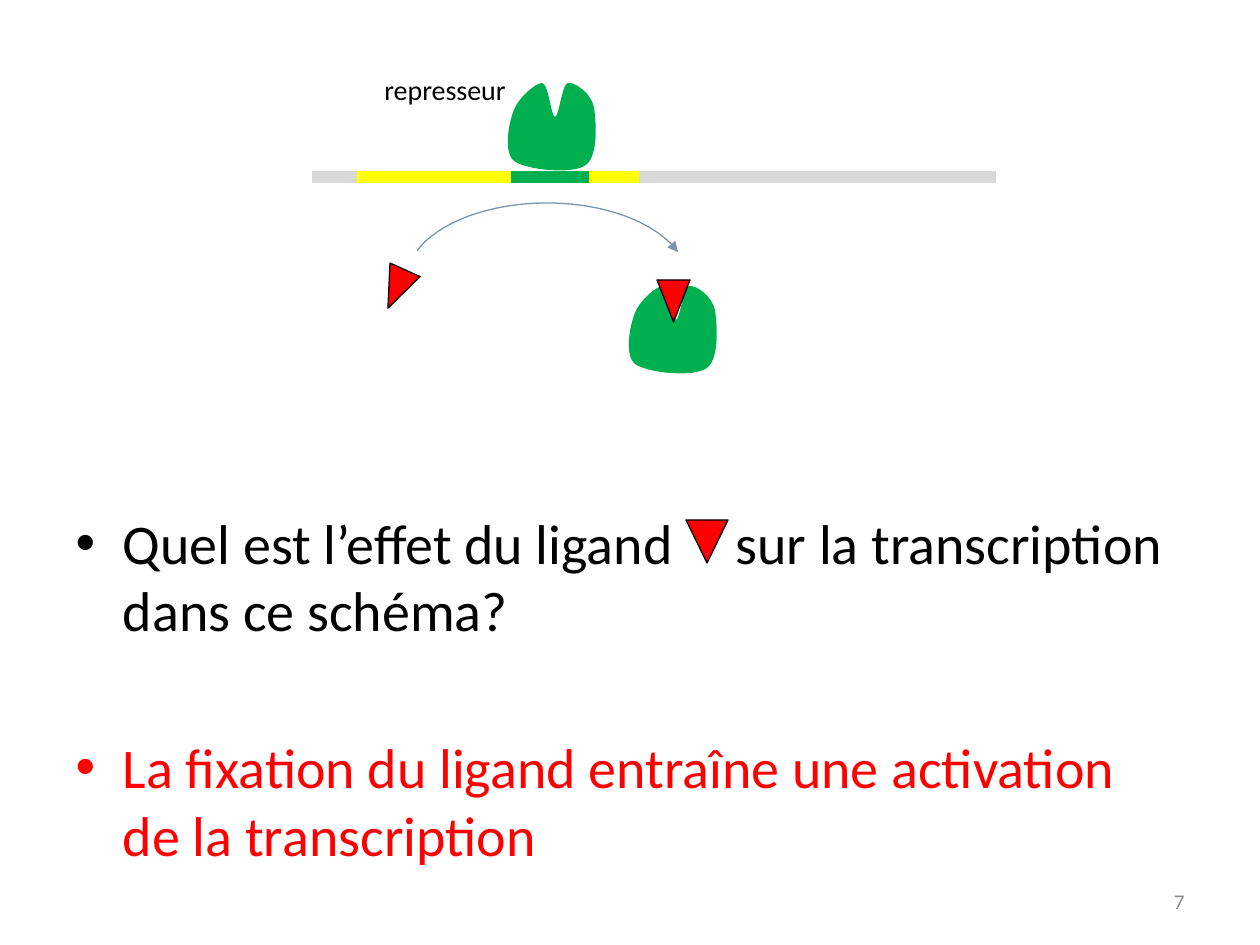
from lxml import etree
from pptx import Presentation
from pptx import util as u
from pptx.dml.color import RGBColor
from pptx.enum import shapes, text
from pptx.oxml.ns import qn

PX = 914400 / 126
FONT = "Calibri"
COLOURS = {
    "black": "000000",
    "dna": "D9D9D9",
    "gene": "FFFF00",
    "repressor": "00B050",
    "ligand": "FF0000",
    "arrow": "7A94AA",
    "number": "898989",
}
REPRESSOR_SIZE = 88
REPRESSOR_START = (6, 78)
REPRESSOR_CURVES = [
    ((-5, 69), (1, 39), (6, 27)),
    ((11, 14), (28, 0), (34, 0)),
    ((41, 1), (43, 34), (47, 34)),
    ((51, 34), (54, 1), (60, 0)),
    ((67, -1), (83, 10), (86, 24)),
    ((88, 37), (91, 72), (78, 82)),
    ((65, 92), (18, 87), (6, 78)),
]


def px(value):
    """Turn pixels into EMU."""
    return u.Emu(round(value * PX))


def colour(name):
    """Look up a named colour."""
    return RGBColor.from_string(COLOURS[name])


def add_run(paragraph, words, size=32, fill="black", spacing=0):
    """Append formatted text to a paragraph."""
    run = paragraph.add_run()
    run.text = words
    run.font.name = FONT
    run.font.size = u.Pt(size)
    run.font.color.rgb = colour(fill)
    if spacing:
        run.font._element.set("spc", str(round(spacing * 100)))


def add_label(slide, words, box, align=text.PP_ALIGN.LEFT, anchor=text.MSO_ANCHOR.TOP, **style):
    """Add a one-line text box."""
    frame = slide.shapes.add_textbox(*map(px, box)).text_frame
    frame.word_wrap = True
    frame.vertical_anchor = anchor
    frame.paragraphs[0].alignment = align
    add_run(frame.paragraphs[0], words, **style)


def add_segment(slide, left, right, fill):
    """Draw one stretch of the DNA strand."""
    y = px(177)
    line = slide.shapes.add_connector(shapes.MSO_CONNECTOR.STRAIGHT, px(left), y, px(right), y)
    line.line.color.rgb = colour(fill)
    line.line.width = u.Pt(6.75)
    etree.SubElement(line._element.spPr, qn("a:effectLst"))


def curve_outline(shape):
    """Give a freeform the curved outline of the repressor."""
    outline = next(shape._element.iter(qn("a:path")))
    outline.set("w", str(REPRESSOR_SIZE))
    outline.set("h", str(REPRESSOR_SIZE))
    for step in list(outline):
        outline.remove(step)
    steps = [("a:moveTo", (REPRESSOR_START,))]
    steps += [("a:cubicBezTo", curve) for curve in REPRESSOR_CURVES]
    for tag, points in steps + [("a:close", ())]:
        step = etree.SubElement(outline, qn(tag))
        for x, y in points:
            etree.SubElement(step, qn("a:pt"), x=str(x), y=str(y))


def add_repressor(slide, left, top):
    """Draw the repressor protein."""
    ends = [curve[-1] for curve in REPRESSOR_CURVES]
    builder = slide.shapes.build_freeform(*REPRESSOR_START, scale=PX)
    builder.add_line_segments(ends, close=True)
    shape = builder.convert_to_shape()
    shape.left, shape.top = px(left), px(top)
    shape.width = shape.height = px(REPRESSOR_SIZE)
    curve_outline(shape)
    shape.shadow.inherit = False
    shape.fill.solid()
    shape.fill.fore_color.rgb = colour("repressor")
    shape.line.fill.background()


def add_ligand(slide, box, rotation=180):
    """Draw a ligand triangle."""
    shape = slide.shapes.add_shape(shapes.MSO_SHAPE.ISOSCELES_TRIANGLE, *map(px, box))
    shape.rotation = rotation
    shape.shadow.inherit = False
    shape.fill.solid()
    shape.fill.fore_color.rgb = colour("ligand")
    shape.line.color.rgb = colour("black")
    shape.line.width = u.Pt(0.75)


def add_binding_arrow(slide):
    """Draw the curved arrow from the free ligand to the bound one."""
    arc = slide.shapes.add_shape(shapes.MSO_SHAPE.ARC, *map(px, (406, 203, 282, 156)))
    arc.adjustments[0], arc.adjustments[1] = 115.96, 208.55
    arc.shadow.inherit = False
    arc.fill.background()
    arc.line.color.rgb = colour("arrow")
    arc.line.width = u.Pt(0.75)
    etree.SubElement(arc.line._get_or_add_ln(), qn("a:tailEnd"), type="triangle")


def fill_body(slide):
    """Write the question and its answer in the body placeholder."""
    body = slide.placeholders[1]
    body.left, body.top, body.width, body.height = map(px, (63, 502, 1134, 341))
    question = body.text_frame.paragraphs[0]
    add_run(question, "Quel est l’effet du ligand")
    add_run(question, " ", spacing=28.4)
    add_run(question, "sur la transcription dans ce schéma?")
    answer = body.text_frame.add_paragraph()
    answer.space_before = u.Pt(51.5)
    add_run(answer, "La fixation du ligand entraîne une activation de la transcription", fill="ligand")


def main():
    """Build the slide and save it."""
    presentation = Presentation()
    presentation.slide_width, presentation.slide_height = px(1260), px(945)
    slide = presentation.slides.add_slide(presentation.slide_layouts[1])
    title = slide.shapes.title._element
    title.getparent().remove(title)

    fill_body(slide)
    add_label(slide, "7", (903, 876, 294, 50), align=text.PP_ALIGN.RIGHT,
              anchor=text.MSO_ANCHOR.MIDDLE, size=12, fill="number")
    for left, right, fill in ((312, 996, "dna"), (357, 639, "gene"), (511, 589, "repressor")):
        add_segment(slide, left, right, fill)
    add_repressor(slide, 508, 83)
    add_label(slide, "represseur", (372, 66, 233, 78), size=16)
    add_repressor(slide, 629, 286)
    add_ligand(slide, (657, 280, 33, 42))
    add_ligand(slide, (380, 268, 33, 42), rotation=204.1)
    add_binding_arrow(slide)
    add_ligand(slide, (686, 520, 42, 43))
    presentation.save("out.pptx")


if __name__ == "__main__":
    main()
